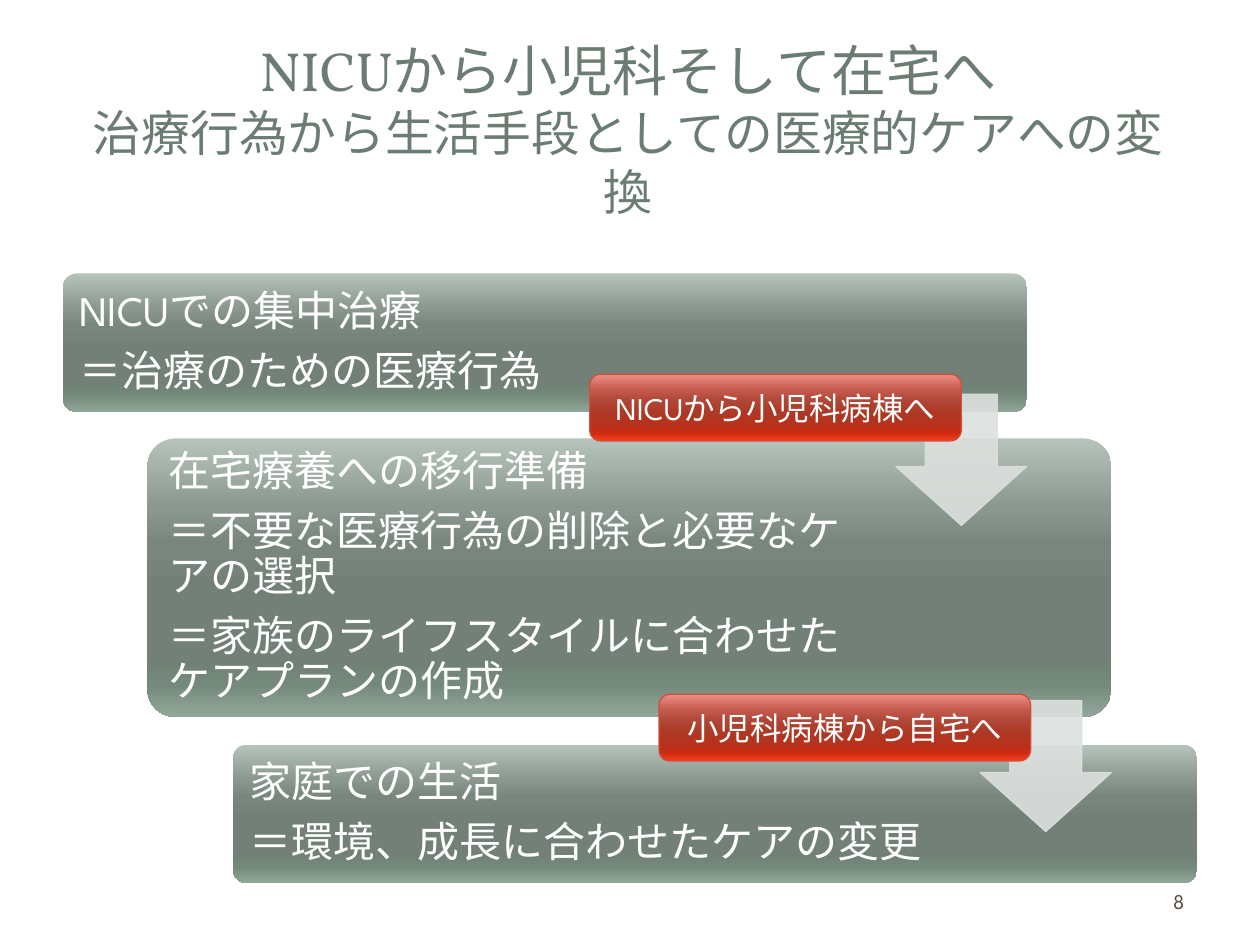
from pptx import Presentation
from pptx.dml.color import RGBColor
from pptx.enum.shapes import MSO_SHAPE
from pptx.enum.text import MSO_ANCHOR, PP_ALIGN
from pptx.oxml.ns import qn
from pptx.util import Inches, Pt
from lxml.etree import SubElement

WHITE = RGBColor(0xFF, 0xFF, 0xFF)
SAGE = RGBColor(0x6B, 0x7D, 0x72)
BROWN = RGBColor(0x56, 0x4B, 0x3C)
MIST = RGBColor(0xDC, 0xE0, 0xDE)
RED = RGBColor(0xCE, 0x50, 0x3A)
STOPS = (0, 25, 38, 55, 80, 88, 100)
GREENS = [RGBColor.from_string(c) for c in
          "B6C3BB 8B9890 79867E 728078 708176 75887C 91A79A".split()]
REDS = [RGBColor.from_string(c) for c in
        "EF8E85 C1584A B04839 AD3A26 BA2F18 CD2C10 F63D1F".split()]


class Deck:
    """Holds the slide and its style, and draws each kind of element."""
    body_font = "League Spartan"
    title_font = "Vollkorn"

    def __init__(self, slide):
        self.s = slide

    def shape(self, kind, box, adjustments=()):
        sp = self.s.shapes.add_shape(kind, *map(Inches, box))
        sp.shadow.inherit = False
        sp.line.fill.background()
        for i, value in enumerate(adjustments):
            sp.adjustments[i] = value
        return sp

    def gradient(self, sp, colors):
        sp.fill.gradient()
        sp.fill.gradient_angle = 270
        stops = sp.fill._fill._gradFill.find(qn("a:gsLst"))
        for stop in list(stops):
            stops.remove(stop)
        for pos, color in zip(STOPS, colors):
            stop = SubElement(stops, qn("a:gs"), pos=str(pos * 1000))
            SubElement(stop, qn("a:srgbClr"), val=str(color))

    def run(self, p, text, size, color, font=None):
        r = p.add_run()
        r.text = text
        r.font.size = Pt(size)
        r.font.name = font or self.body_font
        r.font.color.rgb = color

    def textbox(self, box, inset=0.1):
        tf = self.s.shapes.add_textbox(*map(Inches, box)).text_frame
        tf.word_wrap = True
        tf.vertical_anchor = MSO_ANCHOR.MIDDLE
        tf.margin_left = tf.margin_right = Inches(0.1)
        tf.margin_top = tf.margin_bottom = Inches(inset)
        return tf

    def title(self, box, heading, subtitle):
        p = self.textbox(box, 0.05).paragraphs[0]
        p.alignment = PP_ALIGN.CENTER
        self.run(p, heading, 31.5, SAGE, self.title_font)
        p.add_line_break()
        self.run(p, subtitle, 27.9, SAGE, self.title_font)

    def panel(self, left, top, height, text_width, lines):
        sp = self.shape(MSO_SHAPE.ROUNDED_RECTANGLE, (left, top, 7.65, height), [0.1])
        self.gradient(sp, GREENS)
        pad = 0.03 * height
        tf = self.textbox((left + pad, top + pad, text_width, height - 2 * pad))
        for i, line in enumerate(lines):
            p = tf.add_paragraph() if i else tf.paragraphs[0]
            p.line_spacing = 0.9
            p.space_after = Pt(8.4)
            self.run(p, line, 24, WHITE)

    def arrow(self, left, top):
        sp = self.shape(MSO_SHAPE.DOWN_ARROW, (left, top, 1.04, 1.04), [0.55, 0.45])
        sp.fill.solid()
        sp.fill.fore_color.rgb = MIST
        sp.line.color.rgb = MIST
        sp.line.width = Pt(0.75)
        for color in sp._element.spPr.iter(qn("a:srgbClr")):
            SubElement(color, qn("a:alpha"), val="90000")

    def label(self, left, top, text):
        sp = self.shape(MSO_SHAPE.ROUNDED_RECTANGLE, (left, top, 2.95, 0.53))
        self.gradient(sp, REDS)
        sp.line.color.rgb = RED
        sp.line.width = Pt(0.75)
        tf = sp.text_frame
        tf.vertical_anchor = MSO_ANCHOR.MIDDLE
        p = tf.paragraphs[0]
        p.alignment = PP_ALIGN.CENTER
        self.run(p, text, 18, WHITE)

    def page_number(self, box, text):
        p = self.textbox(box, 0.05).paragraphs[0]
        p.alignment = PP_ALIGN.RIGHT
        self.run(p, text, 12, BROWN)


def main():
    prs = Presentation()
    prs.slide_width, prs.slide_height = Inches(10), Inches(7.5)
    deck = Deck(prs.slides.add_slide(prs.slide_layouts[6]))
    deck.title((0.47, 0.45, 9.03, 1.14), "NICUから小児科そして在宅へ",
               "治療行為から生活手段としての医療的ケアへの変換")
    deck.panel(0.5, 2.17, 1.1, 5.95, ["NICUでの集中治療", "＝治療のための医療行為"])
    deck.panel(1.17, 3.48, 2.21, 5.8, [
        "在宅療養への移行準備",
        "＝不要な医療行為の削除と必要なケアの選択",
        "＝家族のライフスタイルに合わせたケアプランの作成"])
    deck.panel(1.85, 5.91, 1.1, 5.87, ["家庭での生活", "＝環境、成長に合わせたケアの変更"])
    deck.arrow(7.11, 3.13)
    deck.arrow(7.78, 5.56)
    deck.label(4.68, 2.97, "NICUから小児科病棟へ")
    deck.label(5.23, 5.51, "小児科病棟から自宅へ")
    deck.page_number((7.17, 6.95, 2.33, 0.4), "8")
    prs.save("out.pptx")


if __name__ == "__main__":
    main()
